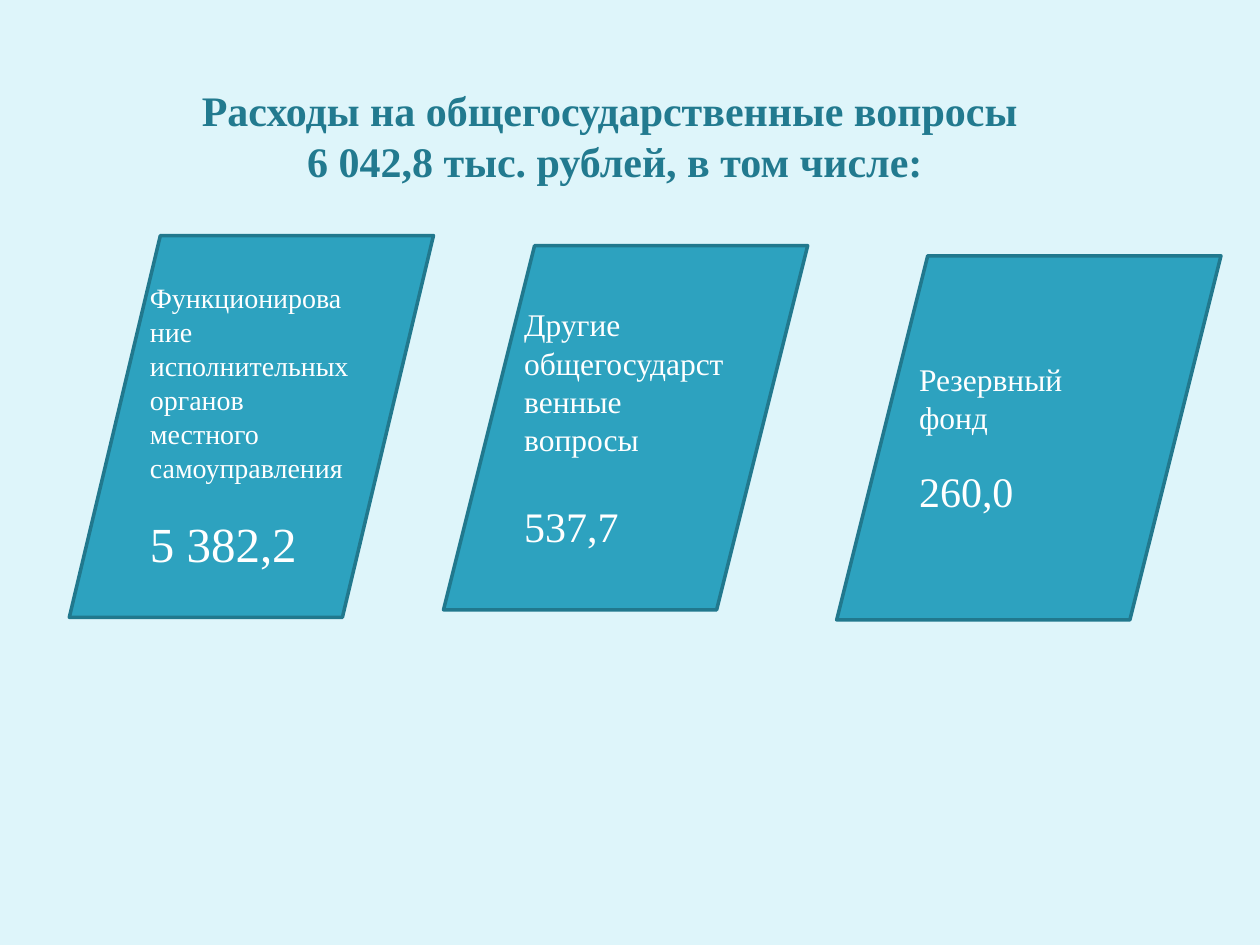
import pptx
import pptx.dml.color
import pptx.enum.shapes
import pptx.enum.text
import pptx.util
from pptx.util import Inches

COLORS = {
    "background": "DEF5FA",
    "title": "227A8F",
    "fill": "2DA2BF",
    "outline": "21788D",
    "text": "FFFFFF",
}


class ExpenseSlide:
    """Holds the style and the current slide, and adds its elements."""

    font_name = "Times New Roman"
    line_factor = 1.21

    def __init__(self, deck):
        self.slide = deck.slides.add_slide(deck.slide_layouts[5])
        fill = self.slide.background.fill
        fill.solid()
        fill.fore_color.rgb = self.color("background")

    def color(self, name):
        return pptx.dml.color.RGBColor.from_string(COLORS[name])

    def style(self, para, size, color, align, bold=False, before=0):
        para.alignment = align
        para.line_spacing = pptx.util.Pt(round(size * self.line_factor, 1))
        para.space_before = pptx.util.Pt(before)
        para.font.name = self.font_name
        para.font.size = pptx.util.Pt(size)
        para.font.bold = bold
        para.font.color.rgb = self.color(color)

    def title(self, lines, left, top, width, height):
        box = self.slide.shapes.title
        box.left, box.top = Inches(left), Inches(top)
        box.width, box.height = Inches(width), Inches(height)
        frame = box.text_frame
        frame.auto_size = pptx.enum.text.MSO_AUTO_SIZE.NONE
        frame.vertical_anchor = pptx.enum.text.MSO_ANCHOR.TOP
        frame.text = "\n".join(lines)
        for para in frame.paragraphs:
            self.style(para, 24, "title", pptx.enum.text.PP_ALIGN.CENTER, bold=True)

    def card(self, label, amount, position, label_size, amount_size, gap):
        shape = self.slide.shapes.add_shape(
            pptx.enum.shapes.MSO_SHAPE.PARALLELOGRAM, *map(Inches, position))
        shape.shadow.inherit = False
        shape.fill.solid()
        shape.fill.fore_color.rgb = self.color("fill")
        shape.line.color.rgb = self.color("outline")
        shape.line.width = pptx.util.Pt(2)
        frame = shape.text_frame
        frame.word_wrap = True
        frame.vertical_anchor = pptx.enum.text.MSO_ANCHOR.MIDDLE
        frame.text = f"{label}\n{amount}"
        left = pptx.enum.text.PP_ALIGN.LEFT
        self.style(frame.paragraphs[0], label_size, "text", left)
        self.style(frame.paragraphs[1], amount_size, "text", left, before=gap)


def main():
    deck = pptx.Presentation()
    deck.slide_width, deck.slide_height = Inches(10), Inches(7.5)
    page = ExpenseSlide(deck)
    page.title(
        ["Расходы на общегосударственные вопросы ", "6 042,8 тыс. рублей, в том числе:"],
        0.62, 0.62, 8.52, 0.91)
    page.card("Функционирование исполнительных органов местного самоуправления",
              "5 382,2", (0.55, 1.87, 2.89, 3.03), 16, 28, 17)
    page.card("Другие общегосударственные вопросы",
              "537,7", (3.52, 1.95, 2.89, 2.89), 18, 24, 24)
    page.card("Резервный фонд",
              "260,0", (6.64, 2.03, 3.05, 2.89), 18, 24, 17)
    deck.save("out.pptx")


if __name__ == "__main__":
    main()
